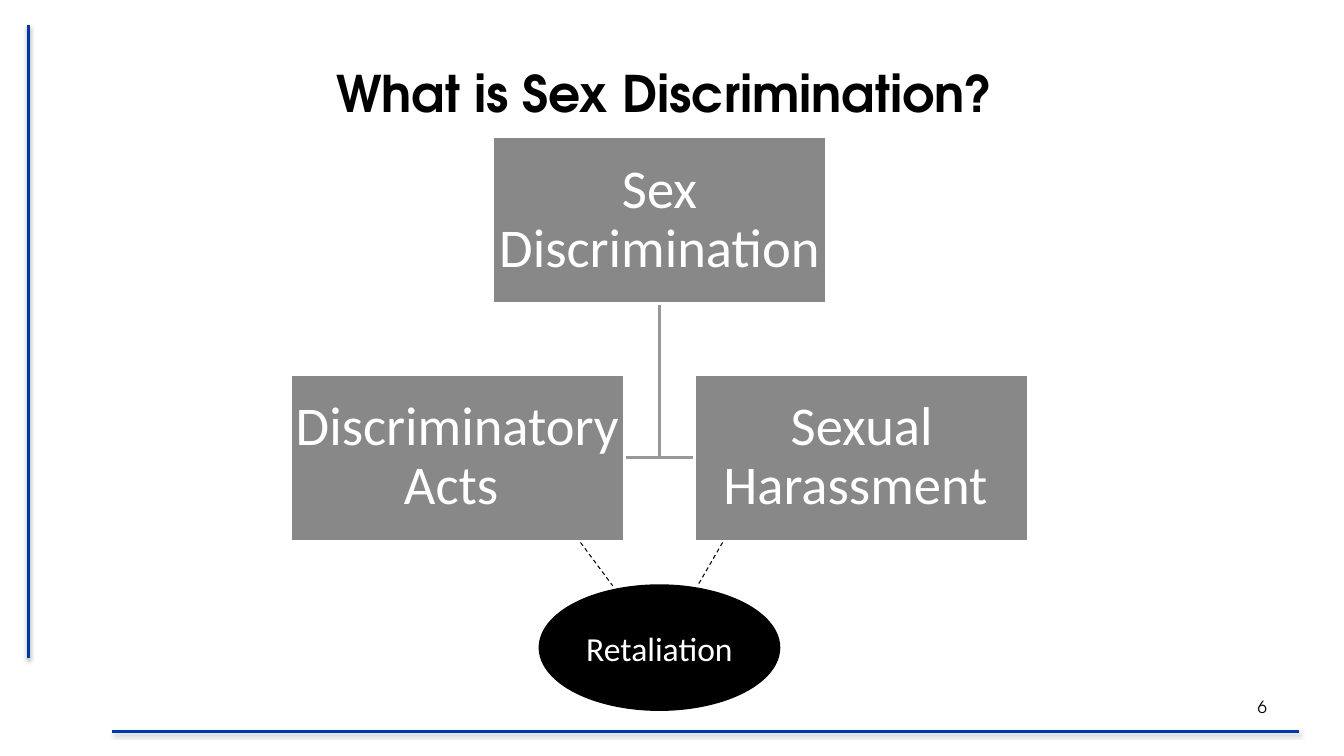
from lxml.etree import SubElement
from pptx import Presentation
from pptx.dml.color import RGBColor
from pptx.enum.dml import MSO_LINE
from pptx.enum.shapes import MSO_CONNECTOR, MSO_SHAPE
from pptx.enum.text import MSO_ANCHOR, MSO_AUTO_SIZE, PP_ALIGN
from pptx.oxml.ns import qn
from pptx.util import Cm, Pt

COLORS = {"rule": "0038A8", "box": "888888", "branch": "989898", "black": "000000", "white": "FFFFFF"}
HEADING_FONT = "TeX Gyre Adventor"
BODY_FONT = "Calibri"


class DiagramSlide:
    def __init__(self, deck):
        self.slide = deck.slides.add_slide(deck.slide_layouts[5])
        self.shapes = self.slide.shapes

    def color(self, name):
        return RGBColor.from_string(COLORS[name])

    def style_line(self, line, color, width):
        line.color.rgb = self.color(color)
        line.width = Pt(width)

    def set_text(self, frame, runs, color, align=PP_ALIGN.CENTER, spacing=None):
        layout = {"word_wrap": True, "auto_size": MSO_AUTO_SIZE.NONE, "vertical_anchor": MSO_ANCHOR.MIDDLE}
        for key, value in layout.items():
            setattr(frame, key, value)
        paragraph = frame.paragraphs[0]
        paragraph.alignment = align
        if spacing:
            paragraph.line_spacing = spacing
        for words, font_format in runs:
            run = paragraph.add_run()
            run.text = words
            for key, value in font_format.items():
                setattr(run.font, key, value)
            run.font.color.rgb = self.color(color)

    def title(self, words, left, top, width, height):
        heading = self.shapes.title
        place = {"left": Cm(left), "top": Cm(top), "width": Cm(width), "height": Cm(height)}
        for key, value in place.items():
            setattr(heading, key, value)
        self.set_text(heading.text_frame, [(words, {"name": HEADING_FONT, "size": Pt(36), "bold": True})], "black")

    def page_number(self, words, left, top, width, height):
        number = self.shapes.add_textbox(Cm(left), Cm(top), Cm(width), Cm(height))
        self.set_text(number.text_frame, [(words, {"name": HEADING_FONT, "size": Pt(12)})], "black", PP_ALIGN.RIGHT)

    def line(self, start, end, color, width, dashed=False, shadow=False):
        stroke = self.shapes.add_connector(MSO_CONNECTOR.STRAIGHT, *(Cm(v) for v in (*start, *end)))
        self.style_line(stroke.line, color, width)
        if dashed:
            stroke.line.dash_style = MSO_LINE.DASH
        effects = SubElement(stroke._element.spPr, qn("a:effectLst"))
        if shadow:
            outer = SubElement(effects, qn("a:outerShdw"), blurRad="40000", dist="20000", dir="5400000", rotWithShape="0")
            tint = SubElement(outer, qn("a:srgbClr"), val=COLORS["black"])
            SubElement(tint, qn("a:alpha"), val="38000")

    def branch(self, *points):
        start, *rest = [(Cm(x), Cm(y)) for x, y in points]
        builder = self.shapes.build_freeform(*start)
        builder.add_line_segments(rest, close=False)
        elbow = builder.convert_to_shape()
        elbow.fill.background()
        elbow.shadow.inherit = False
        self.style_line(elbow.line, "branch", 2)

    def node(self, kind, left, top, width, height, fill, outline, runs, inset=None, spacing=None):
        node = self.shapes.add_shape(kind, Cm(left), Cm(top), Cm(width), Cm(height))
        node.shadow.inherit = False
        node.fill.solid()
        node.fill.fore_color.rgb = self.color(fill)
        self.style_line(node.line, outline, 2)
        if inset is not None:
            for side in ("left", "top", "right", "bottom"):
                setattr(node.text_frame, f"margin_{side}", Cm(inset))
        self.set_text(node.text_frame, runs, "white", spacing=spacing)


def main():
    deck = Presentation()
    deck.slide_width, deck.slide_height = Cm(33.87), Cm(19.05)
    page = DiagramSlide(deck)

    page.line((0.71, 16.59), (0.71, 0.64), "rule", 2, shadow=True)
    page.line((2.82, 18.44), (32.74, 18.44), "rule", 2, shadow=True)
    page.title("What is Sex Discrimination? ", 3.1, 0.74, 27.66, 3.18)

    center, top = 16.62, 3.45
    width, height, gap = 8.42, 4.21, 1.77
    child_top = top + height + gap
    child_middle = child_top + height / 2
    child_offset = (width + gap) / 2

    for side in (1, -1):
        page.branch((center, top + height), (center, child_middle), (center + side * gap / 2, child_middle))

    topics = [
        ("Sex Discrimination ", center, top),
        ("Discriminatory Acts ", center - child_offset, child_top),
        ("Sexual Harassment ", center + child_offset, child_top),
    ]
    for topic, middle, topic_top in topics:
        page.node(MSO_SHAPE.RECTANGLE, middle - width / 2, topic_top, width, height, "box", "white",
                  [(topic, {"name": BODY_FONT, "size": Pt(39)})], inset=0.07, spacing=0.9)

    page.page_number("6", 30.12, 17.3, 2.06, 1.02)
    page.node(MSO_SHAPE.OVAL, center - 3.01, 14.76, 6.02, 3.12, "black", "black",
              [("Retaliation", {"name": BODY_FONT, "size": Pt(24)}), (" ", {"name": BODY_FONT, "size": Pt(18)})])
    for start_x, end_x in ((18.21, 17.58), (14.63, 15.44)):
        page.line((start_x, 13.67), (end_x, 14.76), "black", 0.75, dashed=True)

    deck.save("out.pptx")


if __name__ == "__main__":
    main()
